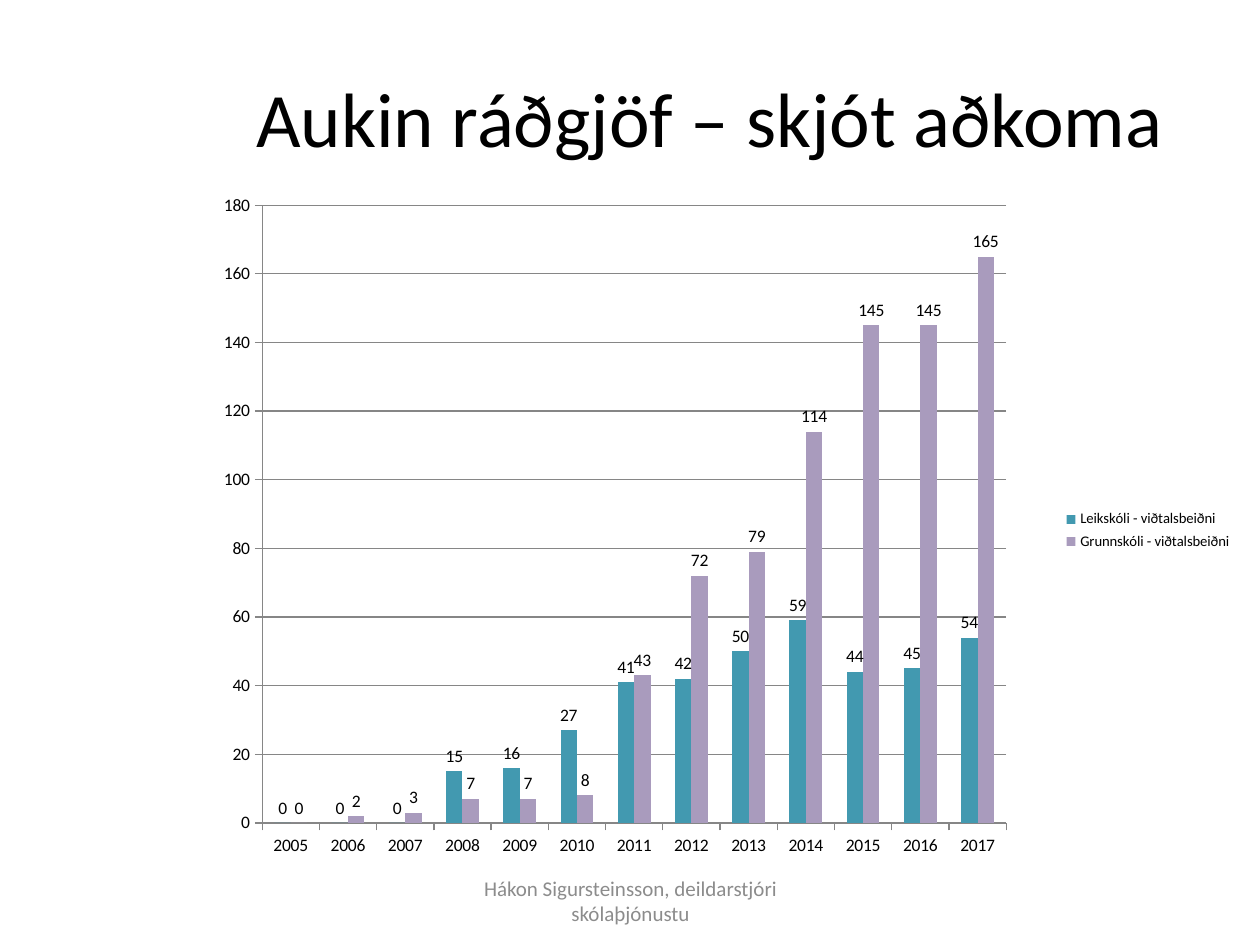
from dataclasses import dataclass

import pptx
import pptx.chart.data
import pptx.dml.color
import pptx.enum.chart
import pptx.enum.text
import pptx.util
from lxml import etree

Inches = pptx.util.Inches
FONT = "Calibri"
GREY = "868686"


@dataclass
class Label:
    text: str
    box: tuple[float, float, float, float]
    size: float
    color: str


@dataclass
class Series:
    name: str
    values: tuple[int, ...]
    color: str


LABELS = [
    Label("Aukin ráðgjöf – skjót aðkoma", (1.77, 0.3, 7.73, 1.25), 44, "000000"),
    Label("Hákon Sigursteinsson, deildarstjóri skólaþjónustu",
          (3.42, 6.95, 3.17, 0.4), 12, "8C8C8C"),
]
YEARS = [str(year) for year in range(2005, 2018)]
SERIES = [
    Series("Leikskóli - viðtalsbeiðni",
           (0, 0, 0, 15, 16, 27, 41, 42, 50, 59, 44, 45, 54), "4299B0"),
    Series("Grunnskóli - viðtalsbeiðni",
           (0, 2, 3, 7, 7, 8, 43, 72, 79, 114, 145, 145, 165), "A99BBD"),
]
PLOT_LAYOUT = {"x": 0.057, "y": 0.022, "w": 0.714, "h": 0.908}


def rgb(color: str) -> pptx.dml.color.RGBColor:
    return pptx.dml.color.RGBColor.from_string(color)


def set_attrs(obj, **values) -> None:
    for name, value in values.items():
        setattr(obj, name, value)


def set_font(font, size: float, color: str = "000000") -> None:
    set_attrs(font, name=FONT, size=pptx.util.Pt(size), bold=False)
    font.color.rgb = rgb(color)


def set_line(line, color: str = GREY) -> None:
    line.color.rgb = rgb(color)
    line.width = pptx.util.Pt(0.75)


def add_label(s, label: Label) -> None:
    sp = s.shapes.add_textbox(*map(Inches, label.box))
    tf = sp.text_frame
    set_attrs(tf, word_wrap=True,
              vertical_anchor=pptx.enum.text.MSO_ANCHOR.MIDDLE)
    p = tf.paragraphs[0]
    p.alignment = pptx.enum.text.PP_ALIGN.CENTER
    r = p.add_run()
    r.text = label.text
    set_font(r.font, label.size, label.color)


def set_plot_layout(chart) -> None:
    """Fix the inner plot area as fractions of the chart."""
    area = chart.plots[0]._element.getparent()
    ns = etree.QName(area).namespace
    for old in area.findall(f"{{{ns}}}layout"):
        area.remove(old)
    layout = etree.Element(f"{{{ns}}}layout")
    manual = etree.SubElement(layout, f"{{{ns}}}manualLayout")
    values = {"layoutTarget": "inner", "xMode": "edge", "yMode": "edge"}
    for tag, value in {**values, **PLOT_LAYOUT}.items():
        etree.SubElement(manual, f"{{{ns}}}{tag}", val=str(value))
    area.insert(0, layout)


def add_column_chart(s) -> None:
    enum = pptx.enum.chart
    data = pptx.chart.data.CategoryChartData()
    data.categories = YEARS
    for item in SERIES:
        data.add_series(item.name, item.values)
    chart = s.shapes.add_chart(
        enum.XL_CHART_TYPE.COLUMN_CLUSTERED,
        *map(Inches, (1.61, 1.51, 8.27, 5.4)), data).chart
    set_attrs(chart, has_title=False, has_legend=True)
    set_font(chart.font, 10)
    set_plot_layout(chart)

    # Legend
    set_attrs(chart.legend, position=enum.XL_LEGEND_POSITION.RIGHT,
              include_in_layout=False)
    set_font(chart.legend.font, 8.4)

    # Axes
    for axis in (chart.category_axis, chart.value_axis):
        set_attrs(axis, major_tick_mark=enum.XL_TICK_MARK.OUTSIDE,
                  minor_tick_mark=enum.XL_TICK_MARK.NONE)
        set_font(axis.tick_labels.font, 10)
        set_line(axis.format.line)
    set_attrs(chart.value_axis, minimum_scale=0, maximum_scale=180,
              major_unit=20, has_major_gridlines=True)
    set_line(chart.value_axis.major_gridlines.format.line)

    # Columns and their values
    plot = chart.plots[0]
    set_attrs(plot, gap_width=150, overlap=0, vary_by_categories=False)
    for series, item in zip(plot.series, SERIES):
        series.format.fill.solid()
        series.format.fill.fore_color.rgb = rgb(item.color)
        set_attrs(series.data_labels, show_value=True,
                  position=enum.XL_LABEL_POSITION.OUTSIDE_END)
        set_font(series.data_labels.font, 10)


def main() -> None:
    prs = pptx.Presentation()
    set_attrs(prs, slide_width=Inches(10), slide_height=Inches(7.5))
    s = prs.slides.add_slide(prs.slide_layouts[6])
    for label in LABELS:
        add_label(s, label)
    add_column_chart(s)
    prs.save("out.pptx")


if __name__ == "__main__":
    main()
